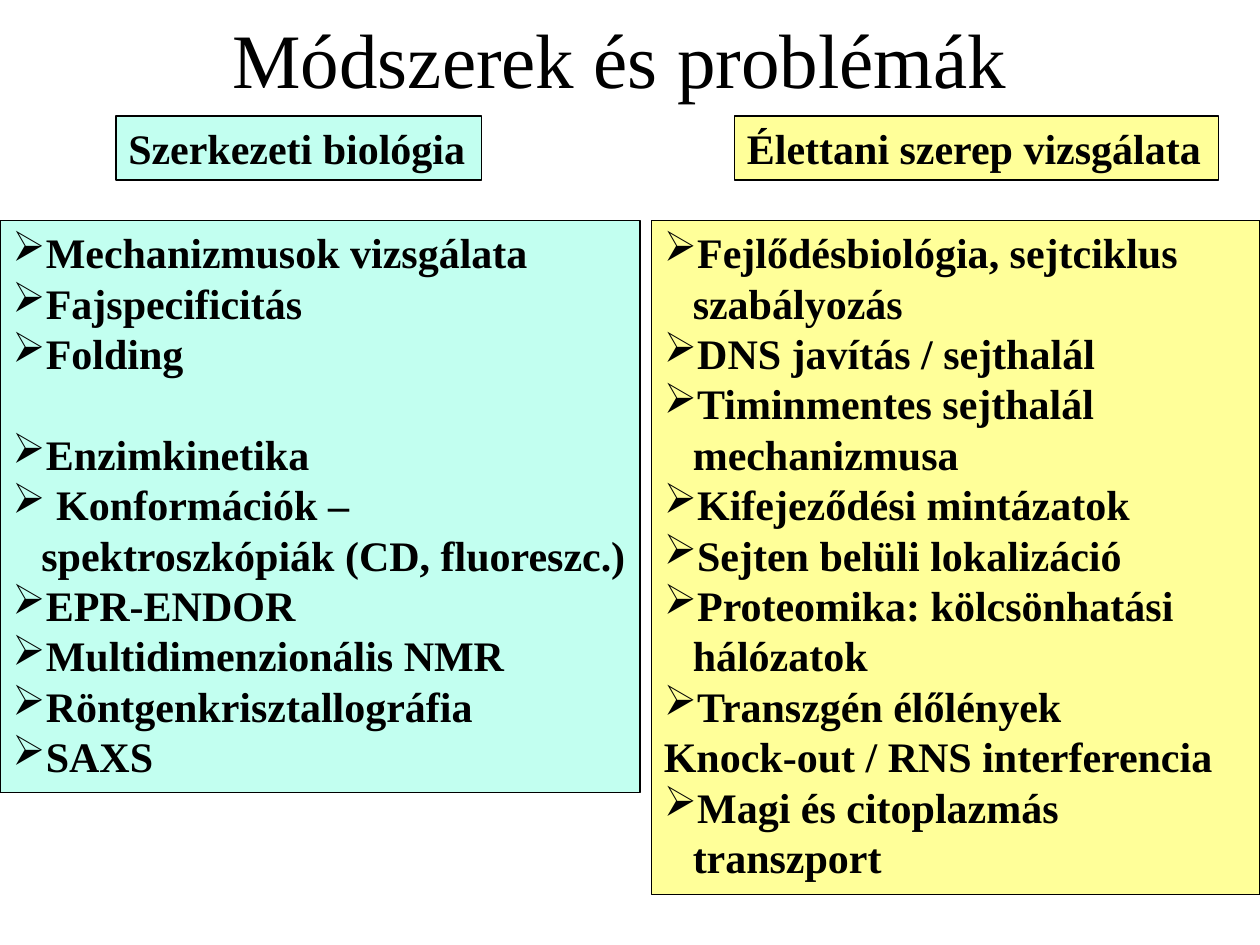
import pptx
import pptx.util
import pptx.dml.color
import pptx.enum.shapes
import pptx.enum.text
import pptx.oxml

Inches, Pt = pptx.util.Inches, pptx.util.Pt
Color = pptx.dml.color.RGBColor.from_string
Align, Anchor = pptx.enum.text.PP_ALIGN, pptx.enum.text.MSO_ANCHOR

# Content
TITLE = "Módszerek és problémák"
BULLET = "➢"
PLAIN = {"Knock-out / RNS interferencia"}  # lines without a bullet
GAP_AFTER = {"Folding"}  # lines that end a group
COLUMNS = [
    {
        "heading": "Élettani szerep vizsgálata",
        "fill": "yellow",
        "heading_at": (5.83, 3.84),  # left, width
        "list_at": (5.17, 4.83),
        "lines": [
            "Fejlődésbiológia, sejtciklus szabályozás",
            "DNS javítás / sejthalál",
            "Timinmentes sejthalál mechanizmusa",
            "Kifejeződési mintázatok",
            "Sejten belüli lokalizáció",
            "Proteomika: kölcsönhatási hálózatok",
            "Transzgén élőlények",
            "Knock-out / RNS interferencia",
            "Magi és citoplazmás transzport",
        ],
    },
    {
        "heading": "Szerkezeti biológia",
        "fill": "mint",
        "heading_at": (0.92, 2.9),
        "list_at": (0, 5.08),
        "lines": [
            "Mechanizmusok vizsgálata",
            "Fajspecificitás",
            "Folding",
            "Enzimkinetika",
            " Konformációk – spektroszkópiák (CD, fluoreszc.)",
            "EPR-ENDOR",
            "Multidimenzionális NMR",
            "Röntgenkrisztallográfia",
            "SAXS",
        ],
    },
]
LIST_HEIGHTS = {"yellow": 5.35, "mint": 4.54}
HEADING_TOP, HEADING_HEIGHT, LIST_TOP = 0.92, 0.51, 1.75
HANG = Inches(0.23)

THEME = {
    "yellow": Color("FFFF99"),
    "mint": Color("C2FFF0"),
    "ink": Color("000000"),
    "font": "Times New Roman",
    "title": Pt(44),
    "body": Pt(24),
    "line": Pt(0.75),
    "group_gap": Pt(28.8),
}


def set_all(target, values):
    for name, value in values.items():
        setattr(target, name, value)


def write(para, text, size, bold):
    span = para.add_run()
    span.text = text
    set_all(span.font, {"name": THEME["font"], "size": size, "bold": bold})
    span.font.color.rgb = THEME["ink"]


def add_bullet(para):
    properties = para._p.get_or_add_pPr()
    set_all(properties, {})
    properties.set("marL", str(HANG))
    properties.set("indent", str(-HANG))
    mark = pptx.oxml.parse_xml(
        '<a:buChar xmlns:a="http://schemas.openxmlformats.org/drawingml/2006/main"'
        f' char="{BULLET}"/>'
    )
    properties.append(mark)


def add_panel(page, at, fill, lines, bulleted):
    box = page.shapes.add_shape(
        pptx.enum.shapes.MSO_SHAPE.RECTANGLE, *map(Inches, at)
    )
    box.shadow.inherit = False
    box.fill.solid()
    box.fill.fore_color.rgb = THEME[fill]
    box.line.color.rgb = THEME["ink"]
    box.line.width = THEME["line"]
    frame = box.text_frame
    set_all(frame, {"word_wrap": bulleted, "vertical_anchor": Anchor.TOP})
    for index, text in enumerate(lines):
        para = frame.add_paragraph() if index else frame.paragraphs[0]
        para.alignment = Align.LEFT
        if text in GAP_AFTER:
            para.space_after = THEME["group_gap"]
        if bulleted and text not in PLAIN:
            add_bullet(para)
        write(para, text, THEME["body"], True)


deck = pptx.Presentation()
set_all(deck, {"slide_width": Inches(10), "slide_height": Inches(7.5)})
page = deck.slides.add_slide(deck.slide_layouts[5])

# Title
title = page.shapes.title
set_all(title, {"left": Inches(0.67), "top": Inches(0),
                "width": Inches(8.5), "height": Inches(0.92)})
title.text_frame.vertical_anchor = Anchor.MIDDLE
title.text_frame.paragraphs[0].alignment = Align.CENTER
write(title.text_frame.paragraphs[0], TITLE, THEME["title"], False)

# Headings and lists
for column in COLUMNS:
    fill = column["fill"]
    left, width = column["heading_at"]
    add_panel(page, (left, HEADING_TOP, width, HEADING_HEIGHT), fill,
              [column["heading"]], False)
    left, width = column["list_at"]
    add_panel(page, (left, LIST_TOP, width, LIST_HEIGHTS[fill]), fill,
              column["lines"], True)

deck.save("out.pptx")
